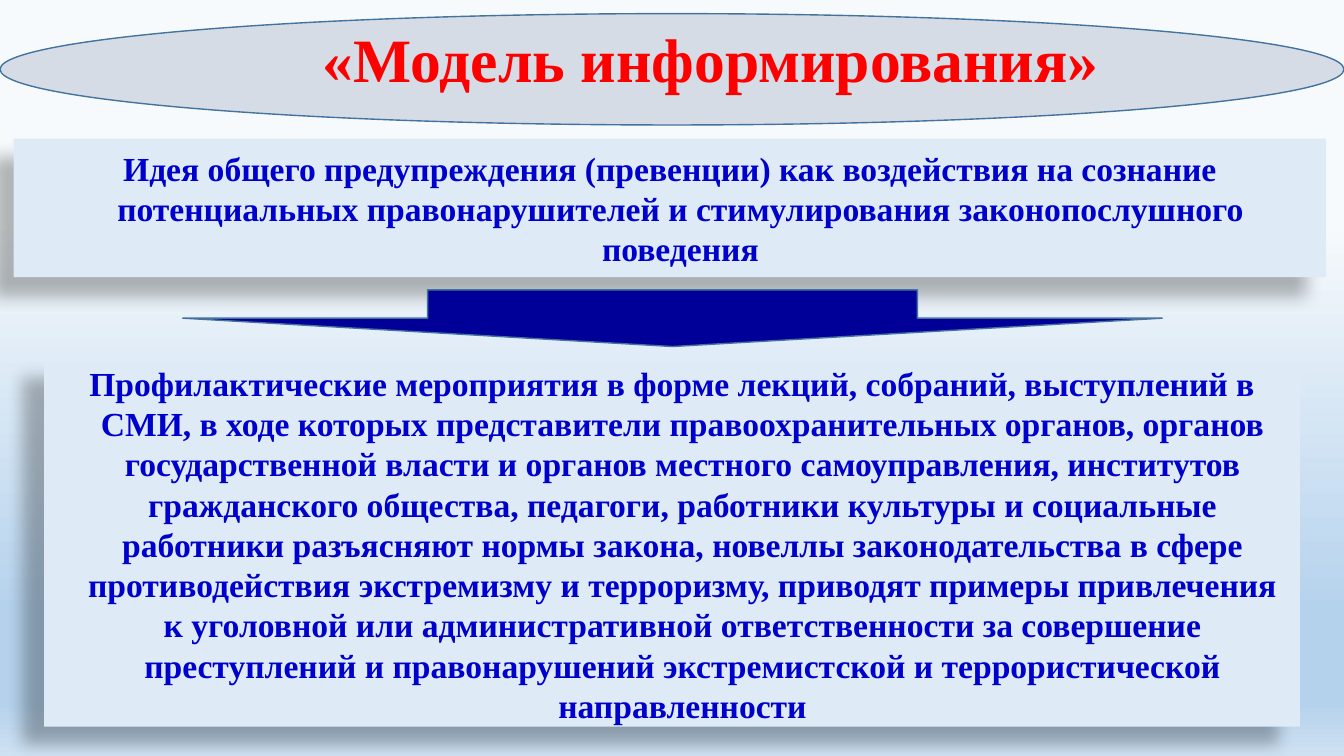
from dataclasses import dataclass

import pptx
import pptx.dml.color
import pptx.enum.shapes
import pptx.enum.text
import pptx.oxml
import pptx.oxml.ns
import pptx.util

EMU_PER_PX = 9525
SHAPE = pptx.enum.shapes.MSO_SHAPE


@dataclass(frozen=True)
class Theme:
    font: str = "Times New Roman"
    title_size: int = 44
    body_size: int = 24
    title_text: str = "FF0000"
    body_text: str = "0000CC"
    oval: str = "D6DCE5"
    panel: str = "DEEBF7"
    arrow: str = "000099"
    outline: str = "43739E"
    shadow: str = "000000"
    background: tuple = ((29, "F7FAFD"), (81, "B5D2EC"), (93, "B5D2EC"), (100, "CEE1F2"))


@dataclass(frozen=True)
class Box:
    left: int
    top: int
    width: int
    height: int

    def emu(self) -> tuple:
        return tuple(px(value) for value in (self.left, self.top, self.width, self.height))


@dataclass(frozen=True)
class Figure:
    kind: SHAPE
    box: Box
    fill: str
    text: str = ""


THEME = Theme()
TITLE = "«Модель информирования»"
TITLE_BOX = Box(174, 15, 1006, 81)
FIGURES = (
    Figure(SHAPE.OVAL, Box(0, 13, 1280, 106), THEME.oval),
    Figure(
        SHAPE.RECTANGLE, Box(13, 132, 1250, 132), THEME.panel,
        "Идея общего предупреждения (превенции) как воздействия на сознание "
        "потенциальных правонарушителей и стимулирования законопослушного поведения",
    ),
    Figure(SHAPE.DOWN_ARROW, Box(174, 276, 933, 54), THEME.arrow),
    Figure(
        SHAPE.RECTANGLE, Box(42, 344, 1196, 348), THEME.panel,
        "Профилактические мероприятия в форме лекций, собраний, выступлений в СМИ, "
        "в ходе которых представители правоохранительных органов, органов "
        "государственной власти и органов местного самоуправления, институтов "
        "гражданского общества, педагоги, работники культуры и социальные работники "
        "разъясняют нормы закона, новеллы законодательства в сфере противодействия "
        "экстремизму и терроризму, приводят примеры привлечения к уголовной или "
        "административной ответственности за совершение преступлений и "
        "правонарушений экстремистской и террористической направленности",
    ),
)


def px(value: int) -> int:
    return pptx.util.Emu(value * EMU_PER_PX)


def rgb(value: str) -> pptx.dml.color.RGBColor:
    return pptx.dml.color.RGBColor.from_string(value)


def paint_background(slide) -> None:
    """Vertical gradient with four stops."""
    slide.background.fill.gradient()
    gradient = slide.element.find(".//" + pptx.oxml.ns.qn("a:gradFill"))
    for child in list(gradient):
        gradient.remove(child)
    stops = "".join(
        f'<a:gs pos="{position * 1000}"><a:srgbClr val="{color}"/></a:gs>'
        for position, color in THEME.background
    )
    namespace = pptx.oxml.ns.nsdecls("a")
    gradient.append(pptx.oxml.parse_xml(f"<a:gsLst {namespace}>{stops}</a:gsLst>"))
    gradient.append(pptx.oxml.parse_xml(f'<a:lin {namespace} ang="5400000" scaled="0"/>'))


def add_shadow(shape) -> None:
    """Soft shadow towards the lower left."""
    effects = shape.element.spPr.find(pptx.oxml.ns.qn("a:effectLst"))
    effects.append(pptx.oxml.parse_xml(
        f'<a:outerShdw {pptx.oxml.ns.nsdecls("a")} blurRad="{pptx.util.Pt(11.8)}" '
        f'dist="{pptx.util.Pt(19.7)}" dir="{141 * 60000}" algn="ctr" rotWithShape="0">'
        f'<a:srgbClr val="{THEME.shadow}"><a:alpha val="28000"/></a:srgbClr></a:outerShdw>'
    ))


def write(paragraph, text: str, size: int, color: str) -> None:
    paragraph.alignment = pptx.enum.text.PP_ALIGN.CENTER
    run = paragraph.add_run()
    run.text = text
    run.font.name = THEME.font
    run.font.size = pptx.util.Pt(size)
    run.font.bold = True
    run.font.color.rgb = rgb(color)


def add_figure(slide, figure: Figure) -> None:
    shape = slide.shapes.add_shape(figure.kind, *figure.box.emu())
    shape.shadow.inherit = False
    shape.fill.solid()
    shape.fill.fore_color.rgb = rgb(figure.fill)
    if not figure.text:
        shape.line.color.rgb = rgb(THEME.outline)
        shape.line.width = pptx.util.Pt(1)
        return
    shape.line.fill.background()
    add_shadow(shape)
    shape.text_frame.word_wrap = True
    shape.text_frame.vertical_anchor = pptx.enum.text.MSO_ANCHOR.MIDDLE
    paragraph = shape.text_frame.paragraphs[0]
    write(paragraph, figure.text, THEME.body_size, THEME.body_text)
    # Hanging indent
    properties = paragraph._p.get_or_add_pPr()
    properties.set("marL", str(px(20)))
    properties.set("indent", str(-px(20)))


def place_title(slide) -> None:
    title = slide.shapes.title
    title.left, title.top, title.width, title.height = TITLE_BOX.emu()
    frame = title.text_frame
    frame.word_wrap = True
    frame.auto_size = pptx.enum.text.MSO_AUTO_SIZE.NONE
    frame.vertical_anchor = pptx.enum.text.MSO_ANCHOR.TOP
    paragraph = frame.paragraphs[0]
    paragraph.space_before = pptx.util.Pt(4)
    write(paragraph, TITLE, THEME.title_size, THEME.title_text)
    # The title stands in front of the oval
    slide.shapes[1].element.addprevious(title.element)
    slide.shapes[0].element.addprevious(slide.shapes[1].element)


def main() -> None:
    presentation = pptx.Presentation()
    presentation.slide_width, presentation.slide_height = px(1280), px(720)
    slide = presentation.slides.add_slide(presentation.slide_layouts[5])
    paint_background(slide)
    for figure in FIGURES:
        add_figure(slide, figure)
    place_title(slide)
    presentation.save("out.pptx")


if __name__ == "__main__":
    main()
